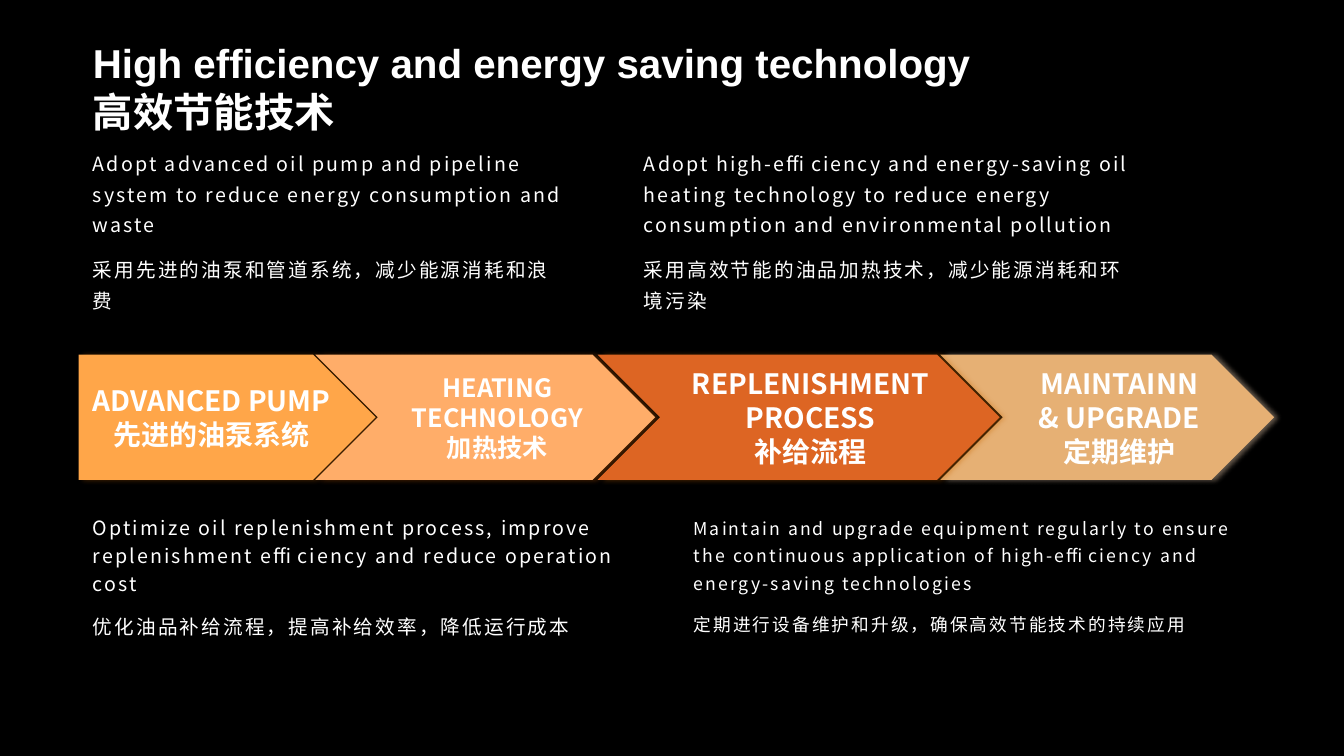
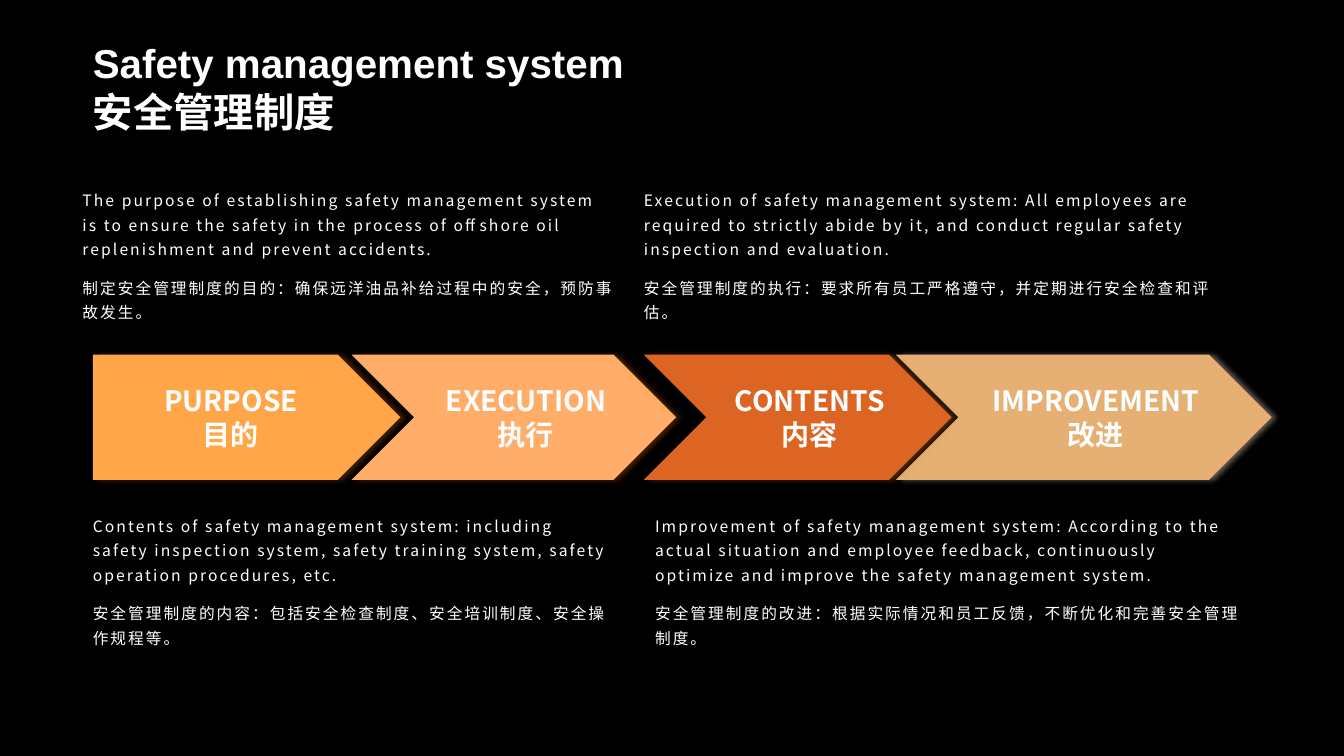
from lxml.etree import SubElement
from pptx import Presentation
from pptx.dml.color import RGBColor
from pptx.enum.shapes import MSO_SHAPE
from pptx.enum.text import MSO_ANCHOR, MSO_AUTO_SIZE, PP_ALIGN
from pptx.oxml.ns import qn
from pptx.util import Cm, Pt

COLORS = {
    "background": "000000",
    "text": "FFFFFF",
    "title_end": "FFA649",
}
ARROW_STYLES = [
    {"fill": "FFA649", "shadow": "A45400"},
    {"fill": "FFAD69", "shadow": "B45200"},
    {"fill": "DD6523", "shadow": "C86700"},
    {"fill": "E6B074", "shadow": "FFDFBE"},
]
DRAW_ORDER = (0, 1, 3, 2)
TITLE_FONT = "Arial"
BODY_FONT = "Noto Sans CJK SC"
TITLE_BOX = (2.34, 0.99, 29.21, 2.39)
BAND_TOP, BAND_HEIGHT = 8.94, 3.15

SLIDES = [
    {
        "title": ["High efficiency and energy saving technology", "高效节能技术"],
        "arrows": [
            (1.98, 7.49, 20, ["ADVANCED PUMP", "先进的油泵系统"]),
            (7.95, 8.56, 18, ["HEATING TECHNOLOGY", "加热技术"]),
            (15.06, 10.13, 20, ["REPLENISHMENT PROCESS", "补给流程"]),
            (23.7, 8.41, 20, ["MAINTAINN & UPGRADE", "定期维护"]),
        ],
        "notes": [
            ((2.34, 3.53, 12.19, 5.23), 14, 1.3, [
                "Adopt advanced oil pump and pipeline system to reduce energy consumption and waste",
                "采用先进的油泵和管道系统，减少能源消耗和浪费"]),
            ((16.23, 3.53, 12.7, 5.23), 14, 1.3, [
                "Adopt high-efficiency and energy-saving oil heating technology to reduce energy "
                "consumption and environmental pollution",
                "采用高效节能的油品加热技术，减少能源消耗和环境污染"]),
            ((2.34, 12.75, 13.92, 3.66), 14, 1.2, [
                "Optimize oil replenishment process, improve replenishment efficiency and reduce "
                "operation cost",
                "优化油品补给流程，提高补给效率，降低运行成本"]),
            ((17.48, 12.75, 14.07, 3.66), 12.6, 1.3, [
                "Maintain and upgrade equipment regularly to ensure the continuous application of "
                "high-efficiency and energy-saving technologies",
                "定期进行设备维护和升级，确保高效节能技术的持续应用"]),
        ],
    },
    {
        "title": ["Safety management system", "安全管理制度"],
        "arrows": [
            (2.34, 7.75, 20, ["PURPOSE", "目的"]),
            (8.86, 8.18, 20, ["EXECUTION", "执行"]),
            (16.23, 7.75, 20, ["CONTENTS", "内容"]),
            (22.58, 9.47, 20, ["IMPROVEMENT", "改进"]),
        ],
        "notes": [
            ((2.08, 4.55, 13.69, 3.76), 11.2, 1.3, [
                "The purpose of establishing safety management system is to ensure the safety in "
                "the process of offshore oil replenishment and prevent accidents.",
                "制定安全管理制度的目的：确保远洋油品补给过程中的安全，预防事故发生。"]),
            ((16.23, 4.55, 14.96, 3.76), 11.2, 1.3, [
                "Execution of safety management system: All employees are required to strictly "
                "abide by it, and conduct regular safety inspection and evaluation.",
                "安全管理制度的执行：要求所有员工严格遵守，并定期进行安全检查和评估。"]),
            ((2.34, 12.75, 13.23, 3.66), 11.2, 1.3, [
                "Contents of safety management system: including safety inspection system, safety "
                "training system, safety operation procedures, etc.",
                "安全管理制度的内容：包括安全检查制度、安全培训制度、安全操作规程等。"]),
            ((16.51, 12.75, 15.04, 3.66), 11.2, 1.3, [
                "Improvement of safety management system: According to the actual situation and "
                "employee feedback, continuously optimize and improve the safety management system.",
                "安全管理制度的改进：根据实际情况和员工反馈，不断优化和完善安全管理制度。"]),
        ],
    },
]


def rgb(value):
    return RGBColor.from_string(value)


def set_frame(tf, insets, anchor):
    tf.word_wrap = True
    tf.auto_size = MSO_AUTO_SIZE.NONE
    tf.vertical_anchor = anchor
    tf.margin_left, tf.margin_top, tf.margin_right, tf.margin_bottom = map(Cm, insets)


def add_run(p, text, size=14, font=BODY_FONT, bold=False, spacing=0, gradient_to=None):
    r = p.add_run()
    r.text = text
    r.font.size, r.font.bold, r.font.name = Pt(size), bold, font
    if gradient_to:
        r.font.fill.gradient()
        r.font.fill.gradient_angle = 280
        for stop, color in zip(r.font.fill.gradient_stops, (COLORS["text"], gradient_to)):
            stop.color.rgb = rgb(color)
    else:
        r.font.color.rgb = rgb(COLORS["text"])
    rpr = r.font._element
    SubElement(rpr, qn("a:ea"), typeface=BODY_FONT)
    if spacing:
        rpr.set("spc", str(round(spacing * 100)))


def add_paragraphs(tf, lines, align=PP_ALIGN.LEFT, line_spacing=1.0, after=0, **run_format):
    for i, line in enumerate(lines):
        p = tf.add_paragraph() if i else tf.paragraphs[0]
        p.alignment, p.line_spacing, p.space_after = align, line_spacing, Pt(after)
        add_run(p, line, **run_format)


def add_shadow(sp, color):
    sp.shadow.inherit = False
    effects = sp._element.spPr.find(qn("a:effectLst"))
    outer = SubElement(effects, qn("a:outerShdw"), blurRad=str(Pt(4)), dist=str(Pt(3)),
                       dir="0", algn="l", rotWithShape="0")
    clr = SubElement(outer, qn("a:srgbClr"), val=color)
    SubElement(clr, qn("a:alpha"), val="40000")


def set_title(s, box, lines):
    sp = s.shapes.title
    sp.left, sp.top, sp.width, sp.height = map(Cm, box)
    set_frame(sp.text_frame, (0, 0, 0, 0), MSO_ANCHOR.MIDDLE)
    p = sp.text_frame.paragraphs[0]
    p.alignment = PP_ALIGN.LEFT
    for i, line in enumerate(lines):
        if i:
            p.add_line_break()
        add_run(p, line, size=28.8, font=TITLE_FONT, bold=True,
                gradient_to=COLORS["title_end"])


def add_arrow_band(s, top, height, arrows):
    for i in DRAW_ORDER:
        left, width, size, lines = arrows[i]
        kind = MSO_SHAPE.CHEVRON if i else MSO_SHAPE.PENTAGON
        sp = s.shapes.add_shape(kind, Cm(left), Cm(top), Cm(width), Cm(height))
        sp.fill.solid()
        sp.fill.fore_color.rgb = rgb(ARROW_STYLES[i]["fill"])
        sp.line.fill.background()
        add_shadow(sp, ARROW_STYLES[i]["shadow"])
        insets = (0.61, 0.13, 0, 0.13) if i else (0.25, 0.13, 0.25, 0.13)
        set_frame(sp.text_frame, insets, MSO_ANCHOR.MIDDLE)
        add_paragraphs(sp.text_frame, lines, align=PP_ALIGN.CENTER, size=size, bold=True)


def add_note(s, box, size, line_spacing, lines):
    tf = s.shapes.add_textbox(*map(Cm, box)).text_frame
    set_frame(tf, (0, 0.13, 0.25, 0.13), MSO_ANCHOR.TOP)
    add_paragraphs(tf, lines, line_spacing=line_spacing, after=10, size=size, spacing=1.5)


def build_slide(prs, content):
    s = prs.slides.add_slide(prs.slide_layouts.get_by_name("Title Only"))
    set_title(s, TITLE_BOX, content["title"])
    add_arrow_band(s, BAND_TOP, BAND_HEIGHT, content["arrows"])
    for note in content["notes"]:
        add_note(s, *note)


def main():
    prs = Presentation()
    prs.slide_width, prs.slide_height = Cm(33.87), Cm(19.05)
    background = prs.slide_master.background.fill
    background.solid()
    background.fore_color.rgb = rgb(COLORS["background"])
    for content in SLIDES:
        build_slide(prs, content)
    prs.save("out.pptx")


if __name__ == "__main__":
    main()
